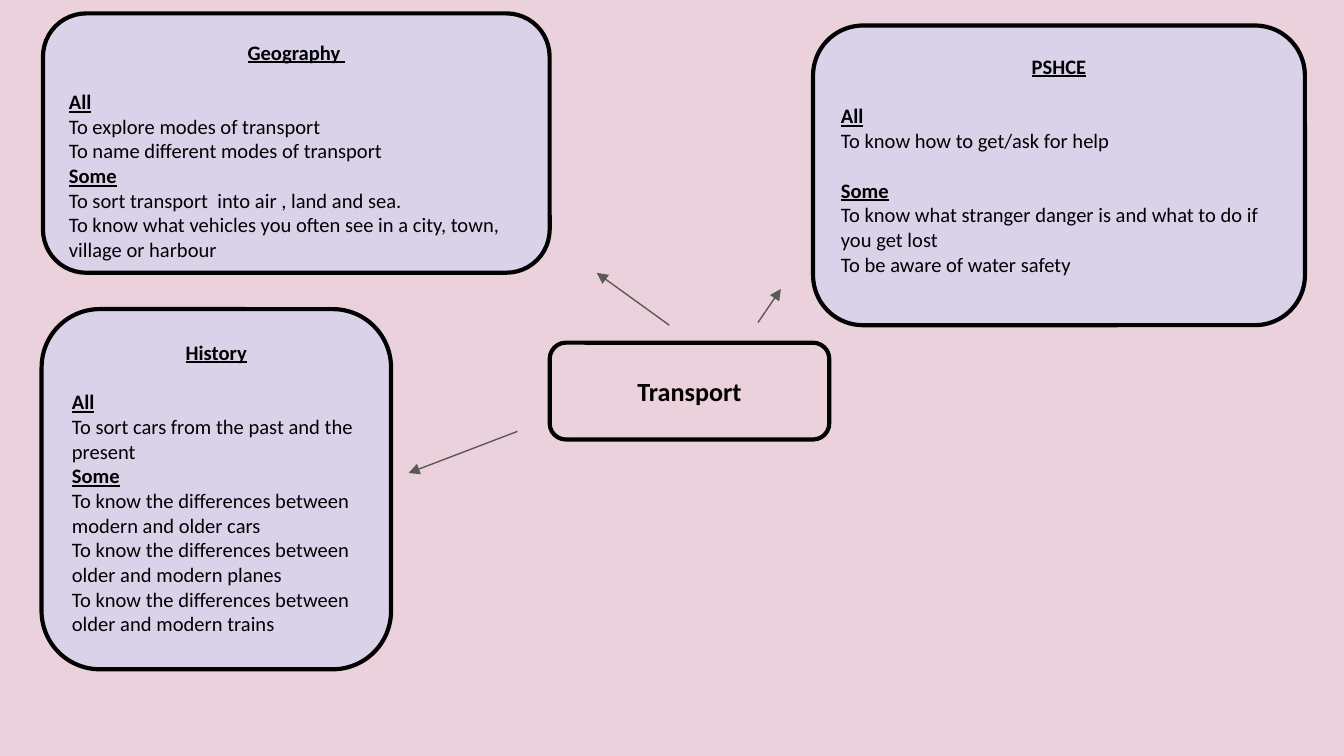
"""Build the Transport topic map slide."""
from lxml import etree
from pptx import Presentation
from pptx.dml.color import RGBColor
from pptx.enum.shapes import MSO_CONNECTOR, MSO_SHAPE
from pptx.enum.text import MSO_ANCHOR, PP_ALIGN
from pptx.oxml.ns import qn
from pptx.util import Inches, Pt

ROUND = MSO_SHAPE.ROUNDED_RECTANGLE
STRAIGHT = MSO_CONNECTOR.STRAIGHT
TOP, MIDDLE = MSO_ANCHOR.TOP, MSO_ANCHOR.MIDDLE
LEFT, CENTER = PP_ALIGN.LEFT, PP_ALIGN.CENTER
PINK, LILAC, BLACK, GREY = "EAD1DC", "D9D2E9", "000000", "595959"
GAP = Pt(13.4)


def paint(color, value):
    color.rgb = RGBColor.from_string(value)


def add_box(spot, fill, anchor, lines):
    box = slide.shapes.add_shape(ROUND, *map(Inches, spot))
    box.shadow.inherit = False
    box.fill.solid()
    paint(box.fill.fore_color, fill)
    paint(box.line.color, BLACK)
    box.line.width = Pt(2.25)
    frame = box.text_frame
    inset = Inches(0.1)
    look = {"word_wrap": True, "vertical_anchor": anchor,
            "margin_left": inset, "margin_right": inset,
            "margin_top": inset, "margin_bottom": inset}
    for key, value in look.items():
        setattr(frame, key, value)
    for index, (text, style, space) in enumerate(lines):
        para = frame.paragraphs[0] if index == 0 else frame.add_paragraph()
        para.alignment = STYLES[style]["align"]
        para.space_before = space
        run = para.add_run()
        run.text = text
        for key, value in STYLES[style]["font"].items():
            setattr(run.font, key, value)
        paint(run.font.color, BLACK)


BASE = {"name": "Calibri", "size": Pt(11), "bold": False, "underline": False}
HEAD = {**BASE, "bold": True, "underline": True}
STYLES = {
    "topic": {"align": CENTER, "font": {**BASE, "size": Pt(14), "bold": True}},
    "title": {"align": CENTER, "font": HEAD},
    "group": {"align": LEFT, "font": HEAD},
    "goal": {"align": LEFT, "font": BASE},
}

SUBJECTS = [
    ("History", (0.31, 2.3, 2.6, 2.68), 0,
     ["To sort cars from the past and the present"],
     ["To know the differences between modern and older cars",
      "To know the differences between older and modern planes",
      "To know the differences between older and modern trains"]),
    ("PSHCE", (6.05, 0.19, 3.66, 2.23), GAP,
     ["To know how to get/ask for help"],
     ["To know what stranger danger is and what to do if you get lost",
      "To be aware of water safety"]),
    ("Geography ", (0.32, 0.1, 3.77, 1.93), 0,
     ["To explore modes of transport",
      "To name different modes of transport"],
     ["To sort transport  into air , land and sea.",
      "To know what vehicles you often see in a city, town, "
      "village or harbour"]),
]

ARROWS = [
    (5.64, 2.4, 5.81, 2.15),
    (3.85, 3.21, 3.04, 3.52),
    (4.98, 2.42, 4.44, 2.03),
]

deck = Presentation()
deck.slide_width = Inches(10)
deck.slide_height = deck.slide_width * 9 // 16
slide = deck.slides.add_slide(deck.slide_layouts[6])
slide.background.fill.solid()
paint(slide.background.fill.fore_color, PINK)

add_box((4.09, 2.55, 2.08, 0.72), PINK, MIDDLE, [("Transport", "topic", 0)])

for title, spot, space, basic, extra in SUBJECTS:
    lines = [(title, "title", 0), ("All", "group", GAP)]
    lines += [(goal, "goal", 0) for goal in basic]
    lines.append(("Some", "group", space))
    lines += [(goal, "goal", 0) for goal in extra]
    add_box(spot, LILAC, TOP, lines)

for ends in ARROWS:
    arrow = slide.shapes.add_connector(STRAIGHT, *map(Inches, ends))
    paint(arrow.line.color, GREY)
    arrow.line.width = Pt(0.75)
    etree.SubElement(arrow.line._get_or_add_ln(), qn("a:tailEnd"), type="triangle")
    etree.SubElement(arrow._element.spPr, qn("a:effectLst"))

deck.save("out.pptx")
